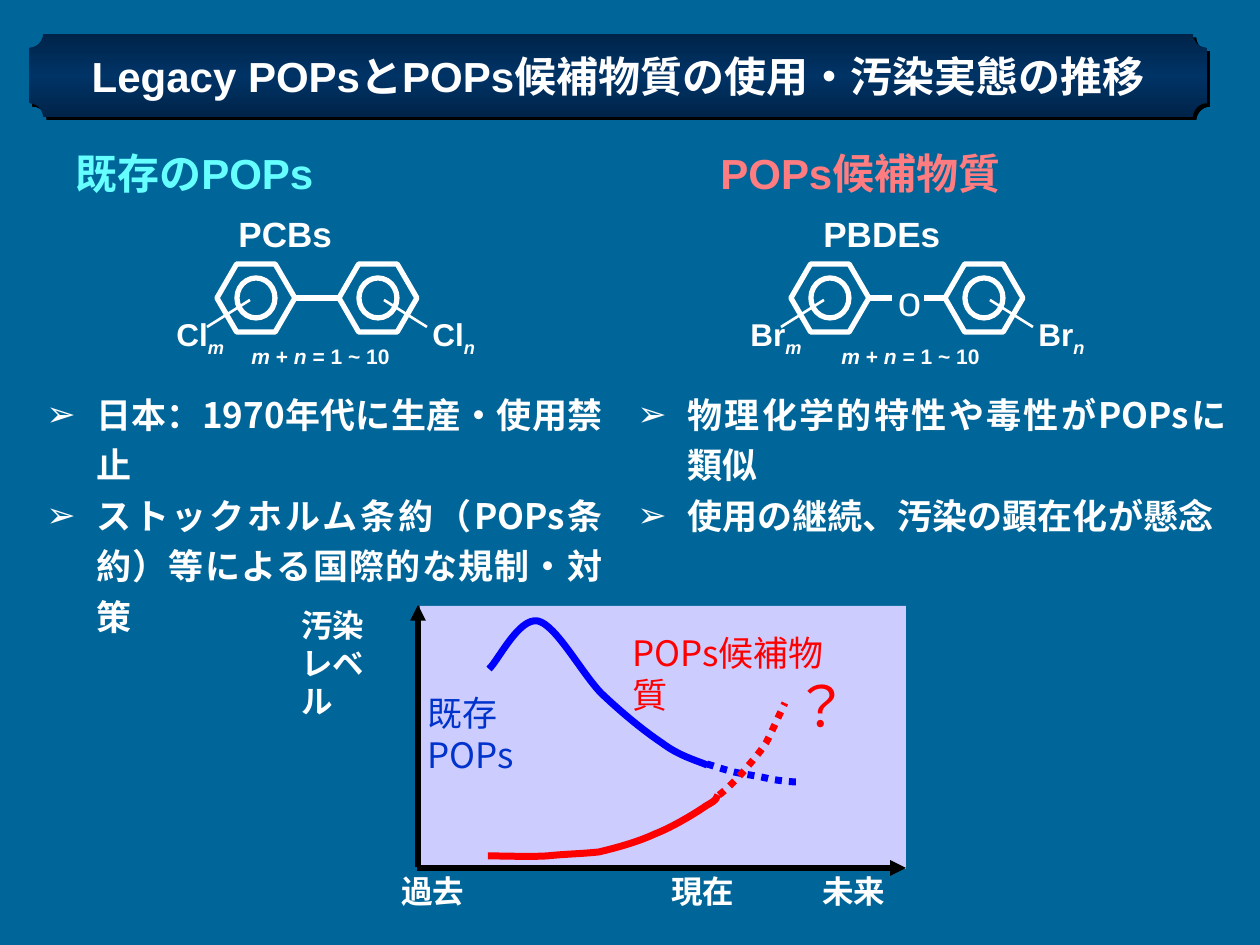
from copy import deepcopy
from pptx import Presentation
from pptx.util import Pt
from pptx.dml.color import RGBColor
from pptx.enum.dml import MSO_LINE
from pptx.enum.shapes import MSO_SHAPE as SHAPE, MSO_CONNECTOR
from pptx.enum.text import PP_ALIGN as ALIGN
from pptx.oxml.ns import qn
from lxml.etree import SubElement

PX = 914400 // 126
JP, LATIN = "Noto Sans CJK JP", "Arial"
WHITE, BLUE, RED = "FFFFFF", "0000FF", "FF0000"

TITLE = "Legacy POPsとPOPs候補物質の使用・汚染実態の推移"
HEADINGS = [
    ("既存のPOPs", (63, 131, 517, 73), "66FFFF", 24),
    ("POPs候補物質", (708, 131, 399, 73), "FF7C80", 24),
    ("PCBs", (226, 198, 181, 63), WHITE, 20),
    ("PBDEs", (811, 198, 197, 63), WHITE, 20),
]
BULLETS = [
    ((34, 379, 581, 164), ["日本：1970年代に生産・使用禁止",
                           "ストックホルム条約（POPs条約）等による国際的な規制・対策"]),
    ((625, 379, 614, 164), ["物理化学的特性や毒性がPOPsに類似",
                            "使用の継続、汚染の顕在化が懸念"]),
]
MOLECULES = [("Cl", 217, 339, None), ("Br", 791, 945, "o")]
FORMULA = [("m", "i"), (" + ", ""), ("n", "i"), (" = 1 ~ 10", "")]
TIMES = [("過去", 389), ("現在", 659), ("未来", 810)]
AXES = [(418, 867, 418, 605), (417, 868, 906, 868)]
CURVES = [
    (BLUE, False, [(489, 669), (498, 661), (519, 617), (538, 621), (556, 625), (581, 672),
                   (601, 693), (622, 713), (644, 731), (662, 743), (679, 756), (698, 761), (707, 765)]),
    (BLUE, True, [(707, 764), (711, 765), (719, 768), (730, 771), (741, 774), (759, 776),
                  (770, 779), (781, 781), (793, 782), (798, 782)]),
    (RED, False, [(488, 856), (508, 856), (528, 857), (547, 856), (566, 854), (580, 854),
                  (599, 852), (616, 848), (638, 842), (655, 834), (673, 827), (696, 813),
                  (706, 806), (717, 800), (717, 798), (718, 795)]),
    (RED, True, [(719, 795), (725, 791), (737, 779), (745, 770), (752, 761), (759, 754),
                 (766, 743), (772, 732), (781, 711), (785, 703)]),
]
CURVE_LABELS = [
    ("既存POPs", (415, 685, 180, 55), "0033CC", 20),
    ("POPs候補物質", (620, 625, 249, 54), RED, 20),
    ("？", (781, 665, 82, 79), RED, 32),
]


def color(value):
    return RGBColor.from_string(value)


def write(tf, lines, size=18, fill=WHITE, font=JP, bold=True, align=None,
          spacing=None, bullet=None):
    for i, line in enumerate(lines):
        p = tf.paragraphs[0] if i == 0 else tf.add_paragraph()
        if align is not None:
            p.alignment = align
        if spacing:
            p.line_spacing = spacing
        if bullet:
            pPr = p._p.get_or_add_pPr()
            pPr.set("marL", str(50 * PX))
            pPr.set("indent", str(-50 * PX))
            SubElement(pPr, qn("a:buFont"), typeface=LATIN)
            SubElement(pPr, qn("a:buChar"), char=bullet)
        for text, style in [(line, "")] if isinstance(line, str) else line:
            r = p.add_run()
            r.text = text
            f = r.font
            f.size, f.bold, f.italic, f.name = Pt(size), bold, "i" in style, font
            f.color.rgb = color(fill)
            rPr = r._r.get_or_add_rPr()
            SubElement(rPr, qn("a:ea"), typeface=JP)
            if "sub" in style:
                rPr.set("baseline", "-25000")


def text(shapes, box, lines, wrap=True, inset=None, **fmt):
    tf = shapes.add_textbox(*[v * PX for v in box]).text_frame
    tf.word_wrap = wrap
    if inset is not None:
        tf.margin_left = tf.margin_right = tf.margin_top = tf.margin_bottom = inset
    write(tf, lines, **fmt)


def shape(shapes, kind, box, fill=None, line=None, width=3):
    sp = shapes.add_shape(kind, *[v * PX for v in box])
    sp.shadow.inherit = False
    if fill:
        sp.fill.solid()
        sp.fill.fore_color.rgb = color(fill)
    else:
        sp.fill.background()
    if line:
        sp.line.color.rgb = color(line)
        sp.line.width = Pt(width)
    else:
        sp.line.fill.background()
    return sp


def line(shapes, ends, stroke=WHITE, width=3, arrow=False):
    c = shapes.add_connector(MSO_CONNECTOR.STRAIGHT, *[v * PX for v in ends])
    c.line.color.rgb = color(stroke)
    c.line.width = Pt(width)
    spPr = c._element.spPr
    if arrow:
        SubElement(spPr.get_or_add_ln(), qn("a:tailEnd"), type="triangle")
    SubElement(spPr, qn("a:effectLst"))


def curve(shapes, stroke, dotted, points):
    fb = shapes.build_freeform(*points[0], scale=PX)
    fb.add_line_segments(points[1:], close=False)
    sp = fb.convert_to_shape()
    sp.shadow.inherit = False
    sp.fill.background()
    sp.line.color.rgb = color(stroke)
    sp.line.width = Pt(4)
    if dotted:
        sp.line.dash_style = MSO_LINE.ROUND_DOT
    steps = list(sp._element.iter(qn("a:lnTo")))
    for i in range(0, len(steps), 3):
        bezier = SubElement(steps[i].getparent(), qn("a:cubicBezTo"))
        for step in steps[i:i + 3]:
            bezier.append(step[0])
            step.getparent().remove(step)


def molecule(shapes, atom, left, right, bridge):
    g = shapes.add_group_shape().shapes
    y = 298
    for x in (left, right):
        ring = shape(g, SHAPE.HEXAGON, (x, y - 34, 78, 68), line=WHITE)
        ring.adjustments[0] = 0.29
        shape(g, SHAPE.OVAL, (x + 20, y - 20, 38, 40), line=WHITE)
    if bridge:
        line(g, (left + 79, y, left + 101, y))
        line(g, (right, y, right - 21, y))
        text(g, (left + 107, y - 23, 24, 50), [bridge], wrap=False, inset=0,
             size=24, font=LATIN, bold=False)
    else:
        line(g, (left + 79, y, right, y))
    line(g, (left + 33, y + 2, left - 10, y + 29), width=1.5)
    line(g, (right + 45, y + 2, right + 88, y + 29), width=1.5)
    for x, index in ((left - 53, "m"), (right + 81, "n")):
        text(g, (x, y + 11, 100, 50), [[(atom, ""), (index, "i sub")]], wrap=False, font=LATIN)
    middle = (left + right + 78) // 2 + 5
    text(g, (middle - 83, y + 39, 180, 38), [FORMULA], wrap=False, size=12, font=LATIN)


def banner(shapes):
    sp = shape(shapes, SHAPE.PLAQUE, (29, 34, 1178, 83))
    sp.adjustments[0] = 0.17
    sp.fill.gradient()
    sp.fill.gradient_angle = 90
    stops = sp.fill.gradient_stops
    for stop, position, value in zip(stops, (0, 0.5), ("002449", "003366")):
        stop.color.rgb = color(value)
        stop.position = position
    gs = sp._element.spPr.find(qn("a:gradFill")).find(qn("a:gsLst"))
    last = deepcopy(gs[0])
    last.set("pos", "100000")
    gs.append(last)
    effects = sp._element.spPr.find(qn("a:effectLst"))
    shadow = SubElement(effects, qn("a:outerShdw"), dist=str(Pt(2.8)), dir="2700000",
                        algn="ctr", rotWithShape="0")
    SubElement(shadow, qn("a:srgbClr"), val="000000")
    sp.text_frame.word_wrap = True
    write(sp.text_frame, [TITLE], size=24, font=LATIN, align=ALIGN.CENTER)


def main():
    prs = Presentation()
    prs.slide_width, prs.slide_height = 1260 * PX, 945 * PX
    s = prs.slides.add_slide(prs.slide_layouts[6])
    s.background.fill.solid()
    s.background.fill.fore_color.rgb = color("006699")
    shapes = s.shapes

    banner(shapes)
    for label, box, fill, size in HEADINGS:
        text(shapes, box, [label], size=size, fill=fill, font=LATIN, spacing=1.2)
    for compound in MOLECULES:
        molecule(shapes, *compound)
    for box, items in BULLETS:
        text(shapes, box, items, size=20, align=ALIGN.JUSTIFY, spacing=1.2, bullet="➢")

    shape(shapes, SHAPE.RECTANGLE, (420, 606, 486, 263), fill="CCCCFF")
    for ends in AXES:
        line(shapes, ends, stroke="000000", arrow=True)
    for data in CURVES:
        curve(shapes, *data)
    for label, box, fill, size in CURVE_LABELS:
        text(shapes, box, [label], size=size, fill=fill, bold=False)
    text(shapes, (289, 600, 113, 88), ["汚染", "レベル"])
    for label, x in TIMES:
        text(shapes, (x, 866, 88, 50), [label], wrap=False)
    prs.save("out.pptx")


if __name__ == "__main__":
    main()
